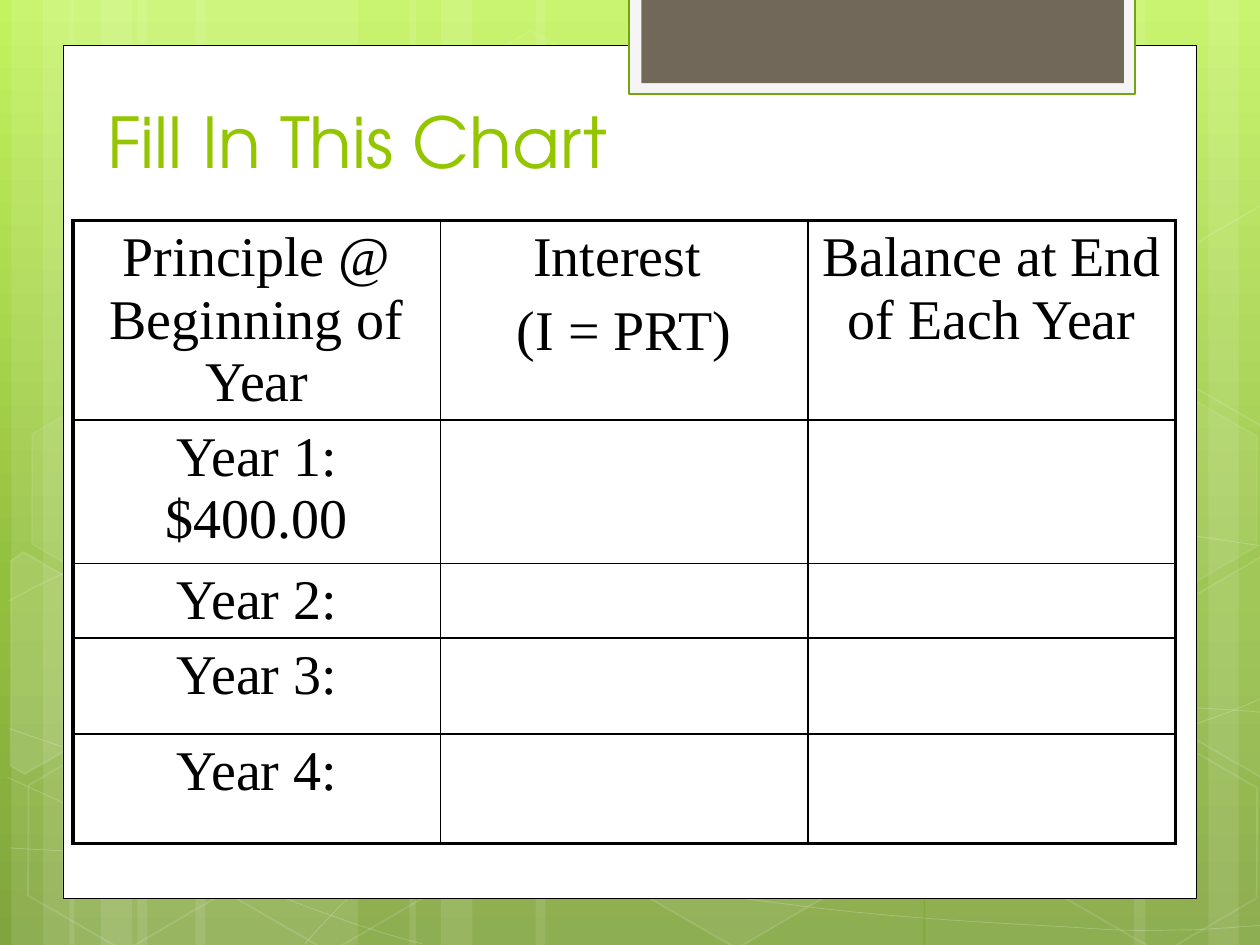
from copy import deepcopy

from lxml.etree import SubElement
from pptx import Presentation
from pptx.dml.color import RGBColor
from pptx.enum.shapes import MSO_SHAPE
from pptx.enum.text import MSO_ANCHOR, PP_ALIGN
from pptx.oxml.ns import qn
from pptx.util import Cm, Pt

WHITE = RGBColor(0xFF, 0xFF, 0xFF)
BLACK = RGBColor(0x00, 0x00, 0x00)
LIME = RGBColor(0x94, 0xC6, 0x00)
TAB_EDGE = RGBColor(0x74, 0xA5, 0x10)
TAB_PAPER = RGBColor(0xF5, 0xF5, 0xF5)
TAB_BROWN = RGBColor(0x71, 0x68, 0x5A)
SKY = [(0, RGBColor(0xC3, 0xF3, 0x5F)), (0.62, RGBColor(0x93, 0xBF, 0x3F)),
       (1, RGBColor(0x81, 0xA5, 0x3E))]

STRIPES = [(1.09, 1.75, 0), (0.09, 0.5, 0), (0.34, 0.83, 0), (1.55, 1.75, 0), (0.55, 0.5, 0),
           (0.8, 0.83, 0), (7.34, 1.75, 180), (9.59, 0.5, 180), (9, 0.83, 180),
           (4.25, 3.08, 0), (3.25, 0.5, 0), (3.5, 0.83, 0)]
CURVES = [
    [(0.07, 6.73), (0.61, 6.76), (1.15, 6.79), (1.9, 6.78), (2.65, 6.77), (3.58, 6.75),
     (4.58, 6.65), (5.58, 6.55), (7, 6.36), (7.92, 6.17), (8.83, 5.98), (9.77, 5.68),
     (10.07, 5.51)],
    [(0.07, 4.77), (0.36, 4.61), (0.65, 4.46), (1.21, 4.31), (1.78, 4.16), (2.59, 3.94),
     (3.47, 3.87), (4.36, 3.8), (5.44, 3.79), (6.54, 3.87), (7.64, 3.95), (9.47, 4.26),
     (10.07, 4.34)],
    [(0.06, 6.17), (1.27, 6.72), (2.47, 7.27), (3.35, 7.49)],
    [(0.07, 5.78), (0.38, 5.89), (0.7, 6), (1.28, 6.16), (1.86, 6.31), (2.73, 6.56),
     (3.57, 6.73), (4.4, 6.9), (5.45, 7.08), (6.28, 7.18), (7.11, 7.29), (8, 7.33),
     (8.53, 7.36), (9.06, 7.4), (9.19, 7.38), (9.45, 7.38), (9.71, 7.37), (9.89, 7.35),
     (10.07, 7.34)],
    [(2.42, 7.49), (2.6, 7.29), (2.78, 7.09), (3.02, 6.91), (3.26, 6.72), (3.6, 6.53),
     (3.88, 6.39), (4.16, 6.25), (4.33, 6.19), (4.69, 6.09), (5.06, 5.99), (5.73, 5.85),
     (6.08, 5.78), (6.44, 5.71), (6.49, 5.71), (6.8, 5.69), (7.11, 5.66), (7.6, 5.63),
     (7.94, 5.62), (8.29, 5.61), (8.86, 5.62), (8.86, 5.62), (8.86, 5.62), (9.53, 5.62),
     (9.53, 5.62), (9.71, 5.63), (9.88, 5.64), (9.97, 5.65), (10.06, 5.66), (10.03, 5.65),
     (10.06, 5.66)],
]
HEXAGONS = [(3.34, 0.36, 4, 8), (4.97, 5.89, 6, 12), (0.11, 5.91, None, 12),
            (0.14, 3.12, 7, 8), (1.74, 5.92, None, 12), (7.53, 4.53, 10, 12),
            (8.34, 5.93, None, 12), (8.34, 3.14, 7, 8)]
LEFT_PIECE = [(0, 0.11), (0.05, 0), (0.95, 0), (1.38, 0.76), (0.94, 1.52), (0.81, 1.52)]
RIGHT_PIECE = [(0, 0.75), (0.43, 0), (0.52, 0), (1.36, 1.45), (1.31, 1.52), (0.44, 1.52)]
PIECES = [(-0.33, 4.6, LEFT_PIECE, 10), (9.17, 4.44, RIGHT_PIECE, 4),
          (9.17, 1.65, RIGHT_PIECE, None)]
TILT = 30

TABLE_WIDTH = 8.75
ROWS = [1.58, 1.14, 0.57, 0.76, 0.87]
CELLS = [["Principle @ Beginning of Year", "Interest \n(I = PRT)", "Balance at End of Each Year"],
         ["Year 1: $400.00", "", ""], ["Year 2:", "", ""], ["Year 3:", "", ""],
         ["Year 4:", "", ""]]


def length(inches):
    """Return a length in inches by way of centimetres."""
    return Cm(2.54 * inches)


def set_alpha(parent, percent):
    """Make the solid fill under an element partly transparent."""
    color = parent.find(qn("a:solidFill")).find(qn("a:srgbClr"))
    SubElement(color, qn("a:alpha")).set("val", str(percent * 1000))


def paint(shape, fill=None, fill_alpha=100, line=None, width=1, line_alpha=100):
    """Set the fill and outline of a shape and take off its shadow."""
    shape.shadow.inherit = False
    if fill is None:
        shape.fill.background()
    else:
        shape.fill.solid()
        shape.fill.fore_color.rgb = fill
        if fill_alpha < 100:
            set_alpha(shape.element.spPr, fill_alpha)
    if line is None:
        shape.line.fill.background()
    else:
        shape.line.color.rgb = line
        shape.line.width = Pt(width)
        if line_alpha < 100:
            set_alpha(shape.element.spPr.find(qn("a:ln")), line_alpha)


def add_preset(shapes, kind, box, **colors):
    """Add a painted preset shape in a box."""
    shape = shapes.add_shape(kind, *map(length, box))
    paint(shape, **colors)
    return shape


def add_outline(shapes, points, origin, close, **colors):
    """Add a painted freeform through points measured from an origin."""
    places = [(length(origin[0] + x), length(origin[1] + y)) for x, y in points]
    builder = shapes.build_freeform(*places[0], scale=1.0)
    builder.add_line_segments(places[1:], close=close)
    shape = builder.convert_to_shape()
    paint(shape, **colors)
    return shape


def bend(shape, knots):
    """Turn each three line segments into a cubic curve, or a line if the handles are at rest."""
    lines = list(shape.element.iter(qn("a:lnTo")))
    for index in range(0, len(lines), 3):
        first, second, last = lines[index:index + 3]
        start, start_handle, end_handle, end = knots[index:index + 4]
        parent = first.getparent()
        if start == start_handle and end == end_handle:
            parent.remove(first)
            parent.remove(second)
            continue
        curve = SubElement(parent, qn("a:cubicBezTo"))
        first.addprevious(curve)
        for line in (first, second, last):
            curve.append(line[0])
            parent.remove(line)


def set_background(page):
    """Fill the page with the vertical green gradient."""
    fill = page.background.fill
    fill.gradient()
    fill.gradient_angle = 270
    stop_list = page.element.find(".//" + qn("a:gsLst"))
    stop_list.append(deepcopy(stop_list[-1]))
    for stop, (position, color) in zip(fill.gradient_stops, SKY):
        stop.position = position
        stop.color.rgb = color


def add_backdrop(page, box):
    """Draw the grouped stripes, curves and hexagons behind the card."""
    left, top, _, height = box
    shapes = page.shapes.add_group_shape().shapes
    for offset, width, turn in STRIPES:
        stripe = add_preset(shapes, MSO_SHAPE.RECTANGLE, (left + offset, top, width, height),
                            fill=WHITE, fill_alpha=10)
        stripe.rotation = turn
    for knots in CURVES:
        curve = add_outline(shapes, knots, (left, top), False,
                            line=WHITE, width=0.5, line_alpha=20)
        bend(curve, knots)
    for x, y, fill_alpha, line_alpha in HEXAGONS:
        hexagon = add_preset(shapes, MSO_SHAPE.HEXAGON, (left + x, top + y, 1.75, 1.52),
                             fill=WHITE if fill_alpha else None, fill_alpha=fill_alpha,
                             line=WHITE, line_alpha=line_alpha)
        hexagon.adjustments[0] = 0.285
        hexagon.adjustments[1] = 1.155
        hexagon.rotation = TILT
    for x, y, points, fill_alpha in PIECES:
        piece = add_outline(shapes, points, (left + x, top + y), True,
                            fill=WHITE if fill_alpha else None, fill_alpha=fill_alpha,
                            line=WHITE, line_alpha=12)
        piece.rotation = TILT


def add_card(page, box):
    """Draw the white card and the tab hanging over its top edge."""
    left, top, _, _ = box
    shapes = page.shapes
    add_preset(shapes, MSO_SHAPE.RECTANGLE, box, fill=WHITE, line=BLACK, width=0.5)
    add_preset(shapes, MSO_SHAPE.RECTANGLE, (left + 4.49, top - 0.38, 4.02, 0.77),
               fill=TAB_PAPER, line=TAB_EDGE, width=1.25)
    add_preset(shapes, MSO_SHAPE.RECTANGLE, (left + 4.59, top - 0.38, 3.83, 0.68),
               fill=TAB_BROWN)


def write(frame, text, size, font, color, align, space=0):
    """Write text into a frame, one paragraph for each line."""
    for index, line in enumerate(text.split("\n")):
        para = frame.add_paragraph() if index else frame.paragraphs[0]
        para.alignment = align
        if index:
            para.space_before = Pt(space)
        span = para.add_run()
        span.text = line
        span.font.size, span.font.name = Pt(size), font
        span.font.color.rgb = color


def set_borders(cell, widths):
    """Draw the left, right, top and bottom borders of a cell."""
    properties = cell._tc.get_or_add_tcPr()
    for index, (side, width) in enumerate(zip("LRTB", widths)):
        border = SubElement(properties, qn("a:ln" + side), w=str(Pt(width)))
        fill = SubElement(border, qn("a:solidFill"))
        SubElement(fill, qn("a:srgbClr"), val=str(BLACK))
        properties.insert(index, border)


def add_interest_table(page, box):
    """Add the yearly interest table with its heavy outer frame."""
    row_count, column_count = len(CELLS), len(CELLS[0])
    table = page.shapes.add_table(row_count, column_count, *map(length, box)).table
    table.first_row = table.horz_banding = False
    for r, (height, texts) in enumerate(zip(ROWS, CELLS)):
        table.rows[r].height = length(height)
        for c, text in enumerate(texts):
            cell = table.cell(r, c)
            cell.fill.background()
            outer = (c == 0, c == column_count - 1, r == 0, r == row_count - 1)
            set_borders(cell, [2.25 if side else 1 for side in outer])
            if text:
                write(cell.text_frame, text, size=32, font="Times New Roman", color=BLACK,
                      align=PP_ALIGN.CENTER, space=6.4)


def add_title(page, box):
    """Place and format the title above the table."""
    title = page.shapes.title
    title.left, title.top, title.width, title.height = map(length, box)
    title.text_frame.vertical_anchor = MSO_ANCHOR.BOTTOM
    write(title.text_frame, "Fill In This Chart", size=40, font="TeX Gyre Adventor",
          color=LIME, align=PP_ALIGN.LEFT)
    page.shapes.element.append(title.element)


def main():
    """Build the deck and save it."""
    deck = Presentation()
    deck.slide_width, deck.slide_height = length(10), length(7.5)
    page = deck.slides.add_slide(deck.slide_layouts[5])
    set_background(page)
    add_backdrop(page, (0, 0, 10, 7.5))
    add_card(page, (0.5, 0.36, 9, 6.77))
    add_interest_table(page, (0.58, 1.75, TABLE_WIDTH, sum(ROWS)))
    add_title(page, (0.75, 0.67, 8.5, 0.83))
    deck.save("out.pptx")


if __name__ == "__main__":
    main()
